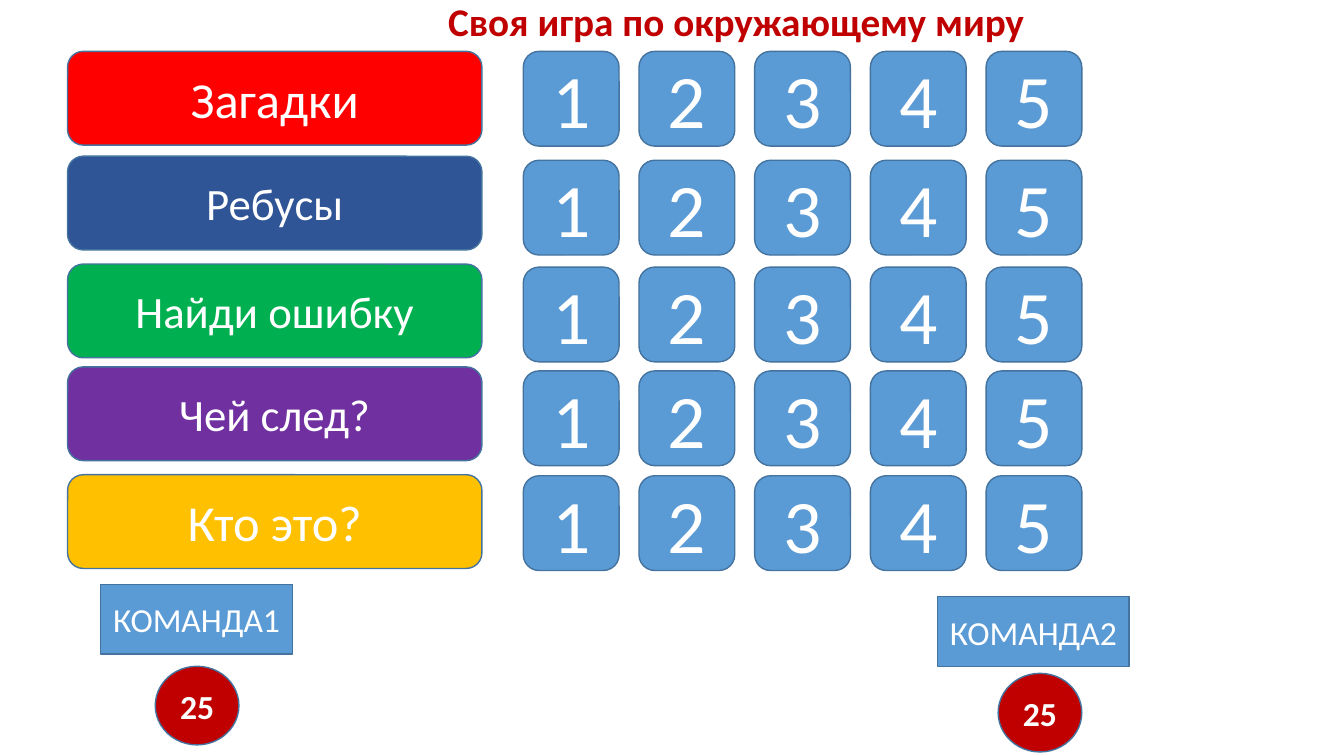
from lxml import etree
from pptx import Presentation
from pptx.dml.color import RGBColor
from pptx.enum.shapes import MSO_SHAPE as Shape
from pptx.enum.text import MSO_ANCHOR as Anchor, MSO_AUTO_SIZE as AutoSize, PP_ALIGN as Align
from pptx.oxml import parse_xml
from pptx.util import Inches, Pt

COLORS = {
    "white": "FFFFFF",
    "red": "FF0000",
    "navy": "2F5597",
    "green": "00B050",
    "purple": "7030A0",
    "gold": "FFC000",
    "blue": "5B9BD5",
    "edge": "43739E",
    "dark red": "C00000",
    "title edge": "4472C4",
}


def write(shape, text, size, color, bold=False):
    para = shape.text_frame.paragraphs[0]
    para.alignment = Align.CENTER
    span = para.add_run()
    span.text = text
    span.font.name = "Calibri"
    span.font.size = Pt(size)
    span.font.bold = bold
    span.font.color.rgb = RGBColor.from_string(COLORS[color])
    return span


def add_button(kind, left, top, width, height, fill, text, size, bold=False):
    button = page.shapes.add_shape(
        kind, Inches(left), Inches(top), Inches(width), Inches(height))
    button.shadow.inherit = False
    button.fill.solid()
    button.fill.fore_color.rgb = RGBColor.from_string(COLORS[fill])
    button.line.color.rgb = RGBColor.from_string(COLORS["edge"])
    button.line.width = Pt(1)
    button.text_frame.vertical_anchor = Anchor.MIDDLE
    write(button, text, size, "white", bold)


deck = Presentation()
deck.slide_width = Inches(13.33)
deck.slide_height = Inches(7.5)
page = deck.slides.add_slide(deck.slide_layouts[5])

title = page.shapes.title
title.left, title.top = Inches(4.31), Inches(-0.08)
title.width, title.height = Inches(5.98), Inches(0.57)
title.text_frame.word_wrap = False
title.text_frame.auto_size = AutoSize.SHAPE_TO_FIT_TEXT
title.text_frame.vertical_anchor = Anchor.TOP
title_span = write(title, "Своя игра по окружающему миру", 28, "dark red", True)
outline = parse_xml(
    '<a:ln xmlns:a="http://schemas.openxmlformats.org/drawingml/2006/main" w="10160">'
    f'<a:solidFill><a:srgbClr val="{COLORS["title edge"]}"/></a:solidFill></a:ln>')
title_span.font._element.insert(0, outline)

categories = [
    ("Загадки", "red", 36, 0.51, 0.51),
    ("Ребусы", "navy", 32, 1.55, 1.59),
    ("Найди ошибку", "green", 32, 2.62, 2.65),
    ("Чей след?", "purple", 32, 3.64, 3.68),
    ("Кто это?", "gold", 36, 4.71, 4.72),
]
for name, fill, size, name_top, number_top in categories:
    add_button(Shape.ROUNDED_RECTANGLE, 0.67, name_top, 4.11, 0.93, fill, name, size)
    for column in range(5):
        add_button(Shape.ROUNDED_RECTANGLE, 5.19 + 1.1475 * column, number_top,
                   0.95, 0.94, "blue", str(column + 1), 54)

teams = [
    ("КОМАНДА1", 1, 5.8, 1.54, 6.61),
    ("КОМАНДА2", 9.3, 5.92, 9.9, 6.68),
]
for team, left, top, score_left, score_top in teams:
    add_button(Shape.RECTANGLE, left, top, 1.9, 0.69, "blue", team, 24)
    add_button(Shape.OVAL, score_left, score_top, 0.83, 0.78, "dark red", "25", 24, True)

deck.save("out.pptx")
